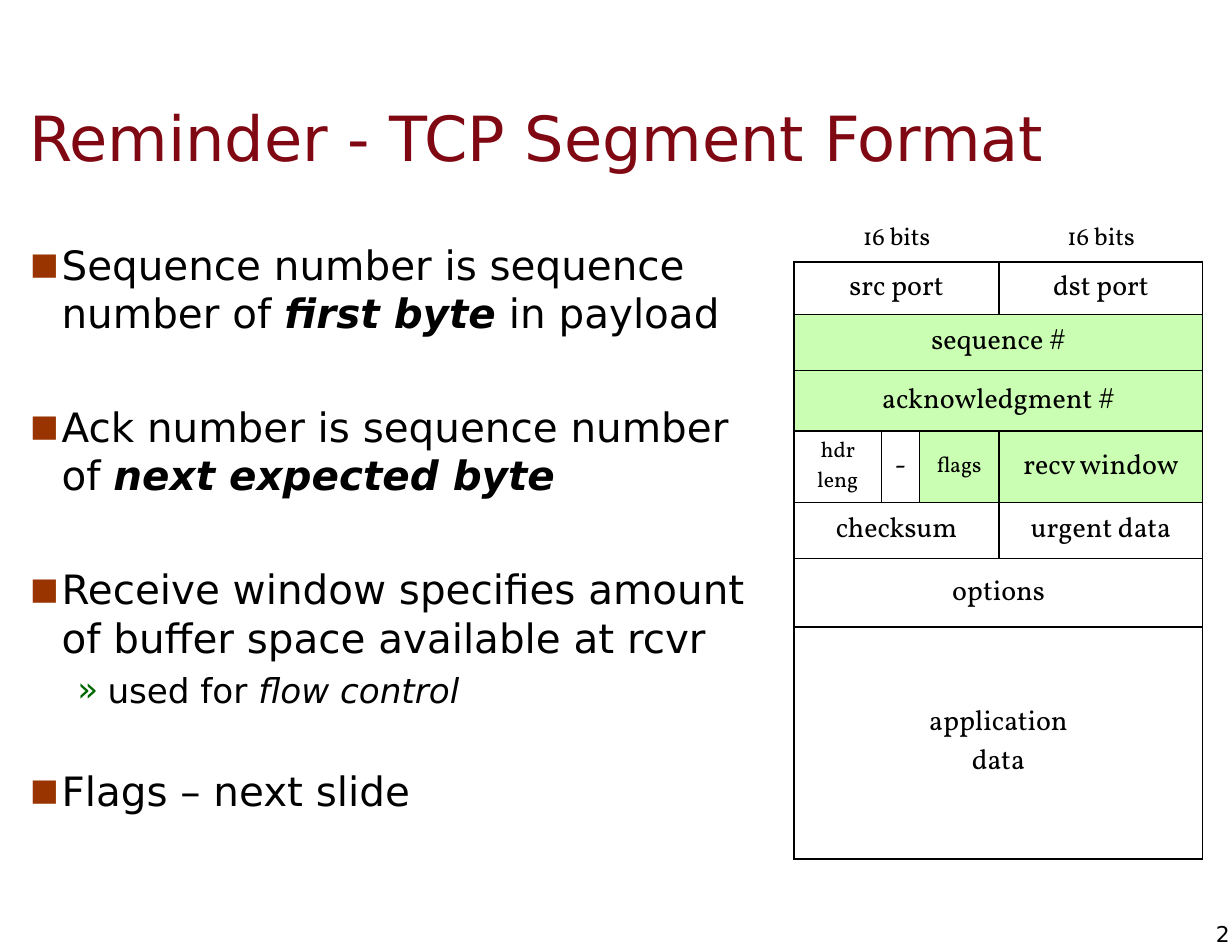
from lxml import etree
from pptx import Presentation
from pptx import util as u
from pptx.dml.color import RGBColor
from pptx.enum import text
from pptx.oxml.ns import qn

SANS, SERIF = "DejaVu Sans", "Vollkorn"
BLACK, WHITE, GREEN, MAROON = "000000", "FFFFFF", "CAFEB2", "7F0813"
ALIGN, ANCHOR = text.PP_ALIGN, text.MSO_ANCHOR

# Level: indent, hanging, size, bullet, bullet colour, bullet size %
LEVELS = [
    (0.42, 0.28, 26, "■", "993300", 75),
    (0.83, 0.27, 22, "»", "006600", 100),
]

# Level, space before in points, runs of (words, style)
POINTS = [
    (0, 0, [("Sequence number is sequence \nnumber of ", ""),
            ("first byte", "bi"), (" in payload", "")]),
    (0, 42, [("Ack number is sequence number\nof ", ""),
             ("next expected byte", "bi")]),
    (0, 42, [("Receive window specifies amount\n"
              "of buffer space available at rcvr", "")]),
    (1, 5, [("used for ", ""), ("flow control", "i")]),
    (0, 36, [("Flags – next slide", "")]),
]

COLUMNS = [0.78, 0.34, 0.71, 1.82]

# Row height, then fields of (words, columns spanned, size, fill)
SEGMENT = [
    (0.47, [("16 bits", 3, 16, None), ("16 bits", 1, 16, None)]),
    (0.47, [("src port", 3, 18, WHITE), ("dst port", 1, 18, WHITE)]),
    (0.5, [("sequence #", 4, 18, GREEN)]),
    (0.54, [("acknowledgment #", 4, 18, GREEN)]),
    (0.64, [("hdr leng", 1, 14, WHITE), ("-", 1, 18, WHITE),
            ("flags", 1, 14, GREEN), ("recv window", 1, 18, GREEN)]),
    (0.5, [("checksum", 3, 18, WHITE), ("urgent data", 1, 18, WHITE)]),
    (0.61, [("options", 4, 18, WHITE)]),
    (2.07, [("application\ndata", 4, 18, WHITE)]),
]


def rgb(value):
    return RGBColor.from_string(value)


def add_run(p, words, size, name=SANS, color=BLACK, style=""):
    """Add words to p, with a line break at each newline."""
    for i, line in enumerate(words.split("\n")):
        if i:
            p.add_line_break()
        r = p.add_run()
        r.text = line
        r.font.size = u.Pt(size)
        r.font.name = name
        r.font.color.rgb = rgb(color)
        r.font.bold = "b" in style
        r.font.italic = "i" in style


def add_box(s, box, margins=(0.11, 0.06), anchor=ANCHOR.TOP, wrap=True):
    tf = s.shapes.add_textbox(*map(u.Inches, box)).text_frame
    tf.word_wrap = wrap
    tf.vertical_anchor = anchor
    tf.margin_left = tf.margin_right = u.Inches(margins[0])
    tf.margin_top = tf.margin_bottom = u.Inches(margins[1])
    return tf


def set_bullet(p, indent, hanging, char, color, percent):
    pPr = p._p.get_or_add_pPr()
    pPr.set("marL", str(u.Inches(indent)))
    pPr.set("indent", str(-u.Inches(hanging)))
    clr = etree.SubElement(pPr, qn("a:buClr"))
    etree.SubElement(clr, qn("a:srgbClr"), val=color)
    etree.SubElement(pPr, qn("a:buSzPct"), val=str(percent * 1000))
    etree.SubElement(pPr, qn("a:buFont"), typeface=SANS)
    etree.SubElement(pPr, qn("a:buChar"), char=char)


def set_borders(cell, visible):
    """Draw the named sides in black and clear the others."""
    tcPr = cell._tc.get_or_add_tcPr()
    for side in "LRTB":
        ln = etree.SubElement(tcPr, qn("a:ln" + side), w=str(u.Pt(1)))
        if side in visible:
            fill = etree.SubElement(ln, qn("a:solidFill"))
            etree.SubElement(fill, qn("a:srgbClr"), val=BLACK)
        else:
            etree.SubElement(ln, qn("a:noFill"))


def add_title(s, box):
    tf = add_box(s, box, anchor=ANCHOR.MIDDLE)
    add_run(tf.paragraphs[0], "Reminder - TCP Segment Format", 40, color=MAROON)


def add_points(s, box):
    tf = add_box(s, box)
    for i, (level, before, runs) in enumerate(POINTS):
        p = tf.add_paragraph() if i else tf.paragraphs[0]
        indent, hanging, size, *bullet = LEVELS[level]
        p.level = level
        set_bullet(p, indent, hanging, *bullet)
        p.space_before = u.Pt(before)
        for words, style in runs:
            add_run(p, words, size, style=style)


def add_segment(s, left, top):
    height = sum(row[0] for row in SEGMENT)
    frame = s.shapes.add_table(len(SEGMENT), len(COLUMNS), u.Inches(left), u.Inches(top),
                               u.Inches(sum(COLUMNS)), u.Inches(height))
    table = frame.table
    table.first_row = table.horz_banding = False
    for col, width in zip(table.columns, COLUMNS):
        col.width = u.Inches(width)
    for i, (row_height, fields) in enumerate(SEGMENT):
        table.rows[i].height = u.Inches(row_height)
        start = 0
        for words, span, size, fill in fields:
            for j in range(start, start + span):
                cell = table.cell(i, j)
                set_borders(cell, "LRTB" if fill else "B")
                if fill:
                    cell.fill.solid()
                    cell.fill.fore_color.rgb = rgb(fill)
                else:
                    cell.fill.background()
            cell = table.cell(i, start)
            if span > 1:
                cell.merge(table.cell(i, start + span - 1))
            cell.vertical_anchor = ANCHOR.MIDDLE if fill else ANCHOR.BOTTOM
            p = cell.text_frame.paragraphs[0]
            p.alignment = ALIGN.CENTER
            add_run(p, words, size, SERIF)
            start += span


def add_page_number(s, box):
    tf = add_box(s, box, margins=(0, 0), anchor=ANCHOR.MIDDLE, wrap=False)
    p = tf.paragraphs[0]
    p.alignment = ALIGN.RIGHT
    add_run(p, "2", 14)


def main():
    prs = Presentation()
    prs.slide_width, prs.slide_height = u.Inches(11), u.Inches(8.5)
    s = prs.slides.add_slide(prs.slide_layouts[6])
    add_title(s, (0.15, 0.7, 10.53, 1.04))
    add_points(s, (0.02, 2.08, 6.95, 6.42))
    add_segment(s, 7.09, 1.87)
    add_page_number(s, (10.64, 8.22, 0.34, 0.24))
    prs.save("out.pptx")


if __name__ == "__main__":
    main()
